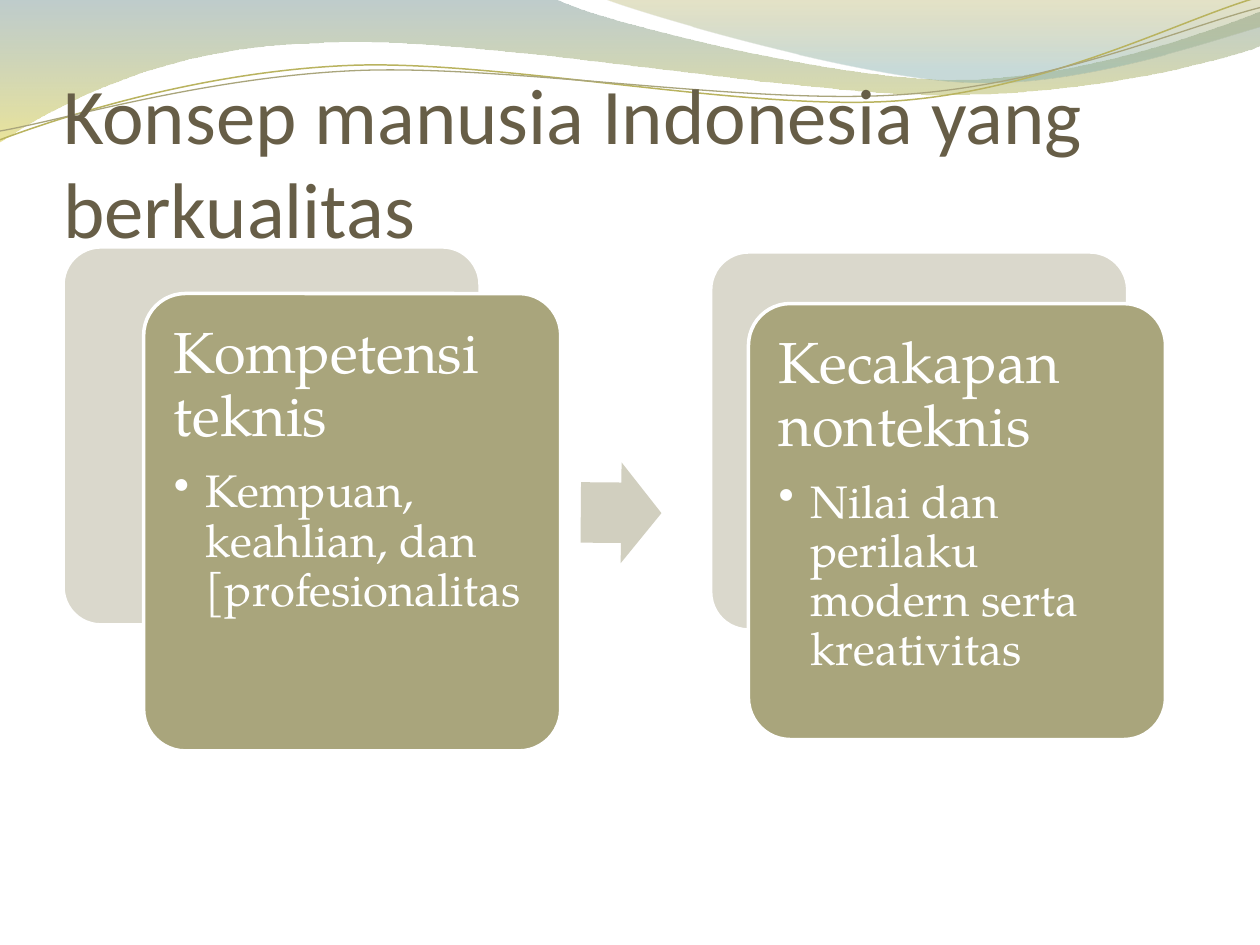
import dataclasses
import math

import pptx
import pptx.dml.color
import pptx.enum.shapes
import pptx.enum.text
import pptx.oxml
import pptx.oxml.ns
import pptx.util

Inches = pptx.util.Inches
Pt = pptx.util.Pt
RGBColor = pptx.dml.color.RGBColor
MSO_SHAPE = pptx.enum.shapes.MSO_SHAPE

WHITE = RGBColor(0xFF, 0xFF, 0xFF)
BROWN = RGBColor(0x67, 0x5E, 0x47)
OLIVE = RGBColor(0xA9, 0xA5, 0x7C)
PALE = RGBColor(0xDA, 0xD8, 0xCC)
ARROW = RGBColor(0xD1, 0xCF, 0xBF)
TEAL = RGBColor(0x71, 0x8F, 0x8E)
YELLOW = RGBColor(0xD8, 0xCE, 0x49)
MOSS = RGBColor(0xA7, 0xA0, 0x45)
AQUA = RGBColor(0x84, 0xAE, 0xAC)
LIME = RGBColor(0xB9, 0xB3, 0x5F)

FONT = "TeX Gyre Pagella"
CARD_W = 3.31
CORNER = 0.1
TEXT_GAP = 0.1
TILT = 357.3


@dataclasses.dataclass
class Stop:
    position: float
    color: RGBColor
    alpha: int  # percent


@dataclasses.dataclass
class Wave:
    """A curve of segments: 2 numbers are a line, 6 a Bezier curve."""
    box: tuple
    start: tuple
    segments: list
    stops: tuple = ()
    line: RGBColor | None = None
    width: float = 0
    rotation: float = 0


@dataclasses.dataclass
class Card:
    back_left: float
    back_top: float
    left: float
    top: float
    height: float
    heading: str
    bullet: str


WAVES = [
    Wave((-0.01, -0.01, 10.02, 1.14), (0, 0), [
        (4.4, -0.01), (4.76, 0.17, 6.64, 0.63, 7.58, 0.63),
        (8.53, 0.63, 9.58, 0.26, 10, 0.09), (10.01, 0.36),
        (9.83, 0.44, 8.7, 0.76, 7.46, 0.75), (6.22, 0.75, 3.82, 0.28, 2.57, 0.34),
        (1.29, 0.36, 0.46, 0.83, -0.01, 1.13), (0, 0),
    ], stops=(Stop(0, TEAL, 45), Stop(1, YELLOW, 55))),
    Wave((4.79, -0.01, 5.21, 0.7), (4.79, -0.01), [
        (5.09, 0.11, 6.82, 0.62, 7.69, 0.65), (8.56, 0.69, 9.61, 0.32, 10, 0.21),
        (10, 0), (4.79, -0.01),
    ], stops=(Stop(0, MOSS, 30), Stop(0.8, AQUA, 45))),
    Wave((-0.02, 0.22, 10.02, 0.71), (0, 1.11), [
        (0.48, 0.93, 1.58, 0.57, 2.77, 0.52), (3.95, 0.47, 5.93, 0.89, 7.13, 0.8),
        (8.33, 0.71, 9.38, 0.15, 9.98, -0.02),
    ], line=LIME, width=0.85, rotation=TILT),
    Wave((-0.02, 0.3, 10.03, 0.58), (0, 1.04), [
        (0.47, 0.96, 1.64, 0.61, 2.83, 0.56), (4.03, 0.51, 5.97, 0.84, 7.17, 0.75),
        (8.36, 0.67, 9.41, 0.21, 10, 0.06),
    ], line=OLIVE, width=0.75, rotation=TILT),
]

CARDS = [
    Card(0.5, 1.96, 1.14, 2.33, 3.63, "Kompetensi teknis",
         "Kempuan, keahlian, dan [profesionalitas"),
    Card(5.64, 2, 5.94, 2.41, 3.46, "Kecakapan nonteknis",
         "Nilai dan perilaku modern serta kreativitas"),
]


def set_all(target, values: dict) -> None:
    for name, value in values.items():
        setattr(target, name, value)


def drawing_xml(tag: str, attributes: str = "", content: str = ""):
    return pptx.oxml.parse_xml(
        f'<a:{tag} {pptx.oxml.ns.nsdecls("a")} {attributes}>{content}</a:{tag}>')


def local_point(wave: Wave, x: float, y: float) -> str:
    """Undo the wave's rotation and measure from the corner of its box."""
    left, top, width, height = wave.box
    angle = math.radians(-wave.rotation)
    dx, dy = x - left - width / 2, y - top - height / 2
    px = width / 2 + dx * math.cos(angle) - dy * math.sin(angle)
    py = height / 2 + dx * math.sin(angle) + dy * math.cos(angle)
    return f'<a:pt x="{Inches(px)}" y="{Inches(py)}"/>'


def set_curve(path, wave: Wave) -> None:
    for child in list(path):
        path.remove(child)
    path.append(drawing_xml("moveTo", content=local_point(wave, *wave.start)))
    for segment in wave.segments:
        points = "".join(local_point(wave, x, y)
                         for x, y in zip(segment[::2], segment[1::2]))
        tag = "lnTo" if len(segment) == 2 else "cubicBezTo"
        path.append(drawing_xml(tag, content=points))
    if wave.stops:
        path.append(drawing_xml("close"))


def add_wave(shapes, wave: Wave) -> None:
    left, top, width, height = map(Inches, wave.box)
    right, bottom = left + width, top + height
    builder = shapes.build_freeform(left, top)
    builder.add_line_segments([(right, top), (right, bottom), (left, bottom)])
    sp = builder.convert_to_shape()
    set_curve(sp._element.xpath(".//a:path")[0], wave)
    sp.rotation = wave.rotation
    sp.shadow.inherit = False
    if wave.line is not None:
        sp.fill.background()
        sp.line.color.rgb = wave.line
        sp.line.width = Pt(wave.width)
        return
    sp.line.fill.background()
    sp.fill.gradient()
    sp.fill.gradient_angle = 270
    for gradient_stop, stop in zip(sp.fill.gradient_stops, wave.stops):
        gradient_stop.position = stop.position
        gradient_stop.color.rgb = stop.color
    for color, stop in zip(sp._element.xpath(".//a:gs/a:srgbClr"), wave.stops):
        color.append(drawing_xml("alpha", f'val="{stop.alpha * 1000}"'))


def add_block(shapes, kind, box: tuple, fill: RGBColor, adjustments: tuple):
    sp = shapes.add_shape(kind, *map(Inches, box))
    sp.shadow.inherit = False
    sp.fill.solid()
    sp.fill.fore_color.rgb = fill
    for i, value in enumerate(adjustments):
        sp.adjustments[i] = value
    return sp


def add_card(shapes, card: Card) -> None:
    for box, fill in (((card.back_left, card.back_top, CARD_W, 3), PALE),
                      ((card.left, card.top, CARD_W, card.height), OLIVE)):
        sp = add_block(shapes, MSO_SHAPE.ROUNDED_RECTANGLE, box, fill, (CORNER,))
        sp.line.color.rgb = WHITE
        sp.line.width = Pt(2)

    box = (card.left + TEXT_GAP, card.top + TEXT_GAP,
           CARD_W - 2 * TEXT_GAP, card.height - 2 * TEXT_GAP)
    tf = shapes.add_textbox(*map(Inches, box)).text_frame
    tf.word_wrap = True
    set_all(tf, {f"margin_{side}": Inches(0.14)
                 for side in ("left", "top", "right", "bottom")})
    heading, bullet = tf.paragraphs[0], tf.add_paragraph()
    for p, text, size, after in ((heading, card.heading, 33, 35),
                                 (bullet, card.bullet, 26, 15)):
        p.line_spacing = 0.9
        p._p.get_or_add_pPr().append(drawing_xml(
            "spcAft", content=f'<a:spcPct val="{after * 1000}"/>'))
        r = p.add_run()
        r.text = text
        set_all(r.font, {"name": FONT, "size": Pt(size)})
        r.font.color.rgb = WHITE
        p._p.append(drawing_xml("endParaRPr", f'sz="{size * 100}"',
                                f'<a:latin typeface="{FONT}"/>'))
    bullet.level = 1
    pPr = bullet._p.get_or_add_pPr()
    pPr.set("marL", str(Inches(0.25)))
    pPr.set("indent", str(Inches(-0.25)))
    pPr.append(drawing_xml("buChar", 'char="••"'))


def format_title(title) -> None:
    set_all(title, {"left": Inches(0.5), "top": Inches(0.77),
                    "width": Inches(9), "height": Inches(1.25)})
    tf = title.text_frame
    set_all(tf, {"word_wrap": True, "auto_size": pptx.enum.text.MSO_AUTO_SIZE.NONE,
                 "vertical_anchor": pptx.enum.text.MSO_ANCHOR.BOTTOM,
                 "margin_left": 0, "margin_top": Inches(0.05),
                 "margin_right": 0, "margin_bottom": 0})
    p = tf.paragraphs[0]
    p.alignment = pptx.enum.text.PP_ALIGN.LEFT
    r = p.add_run()
    r.text = "Konsep manusia Indonesia yang berkualitas"
    set_all(r.font, {"name": "Calibri", "size": Pt(45)})
    r.font.color.rgb = BROWN


def main() -> None:
    prs = pptx.Presentation()
    set_all(prs, {"slide_width": Inches(10), "slide_height": Inches(7.5)})
    s = prs.slides.add_slide(prs.slide_layouts[5])
    for wave in WAVES:
        add_wave(s.shapes, wave)
    title = s.shapes.title
    format_title(title)
    s.shapes._spTree.append(title._element)  # in front of the waves

    first, second = CARDS
    add_card(s.shapes, first)
    arrow = add_block(s.shapes, MSO_SHAPE.RIGHT_ARROW, (4.61, 3.67, 0.64, 0.8),
                      ARROW, (0.6, 0.5))
    arrow.line.fill.background()
    arrow.rotation = 0.5
    add_card(s.shapes, second)
    prs.save("out.pptx")


if __name__ == "__main__":
    main()
